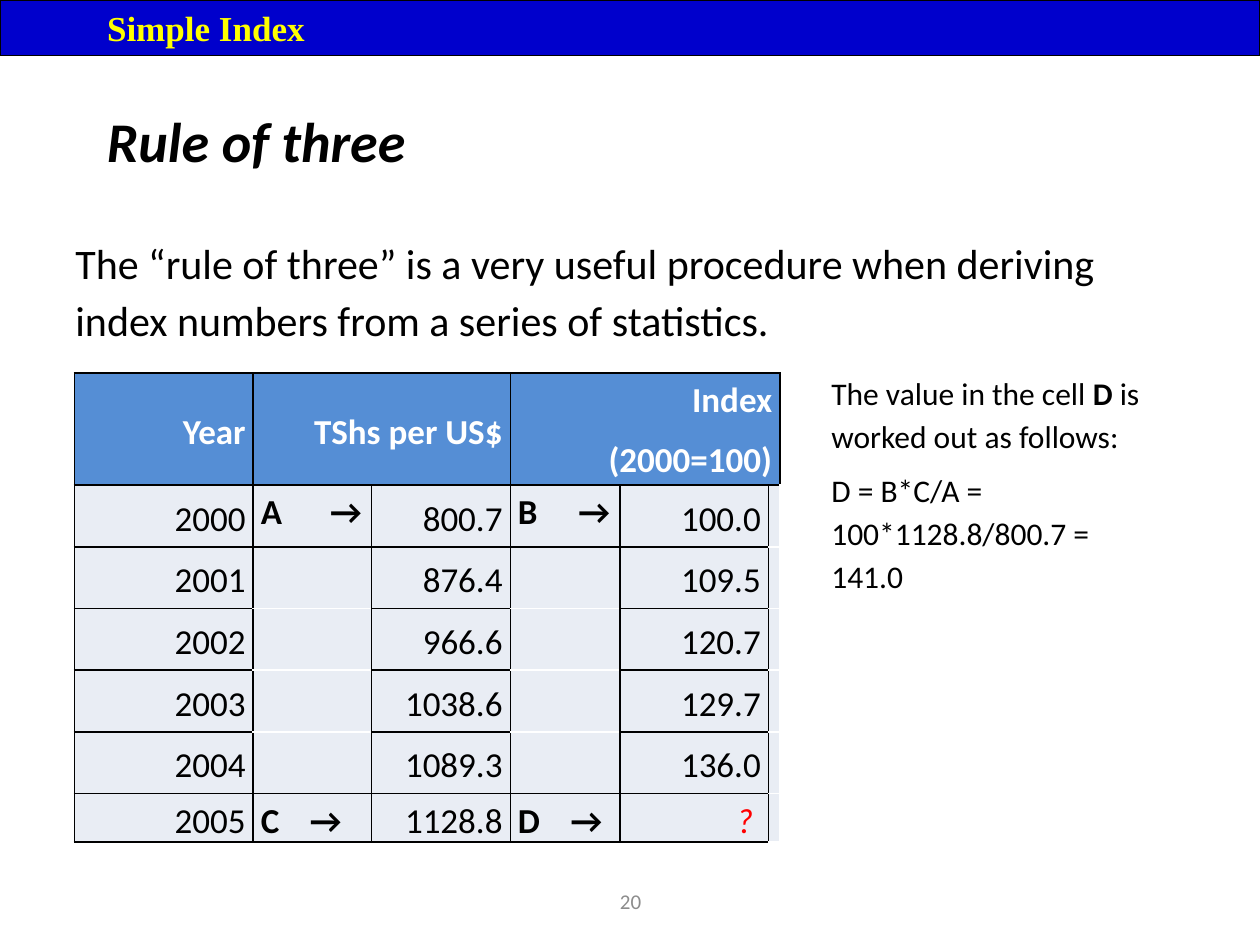
from lxml import etree
from pptx import Presentation
from pptx.dml.color import RGBColor
from pptx.enum.shapes import MSO_SHAPE
from pptx.enum.text import MSO_ANCHOR, PP_ALIGN
from pptx.oxml.ns import qn
from pptx.util import Inches, Pt

LEFT, CENTER, RIGHT = PP_ALIGN.LEFT, PP_ALIGN.CENTER, PP_ALIGN.RIGHT
TOP, MIDDLE = MSO_ANCHOR.TOP, MSO_ANCHOR.MIDDLE
RECTANGLE = MSO_SHAPE.RECTANGLE

BLACK, WHITE, RED = "000000", "FFFFFF", "FF0000"
HEADER_FILL, BODY_FILL = "558ED5", "E9EDF4"
COLUMN_WIDTHS = [1.42, 0.94, 1.1, 0.87, 1.18, 0.09]
ROW_HEIGHTS = [0.89] + [0.49] * 5 + [0.22]
LETTER_COLUMNS = (1, 3)
SPARE_COLUMN = 5
LAST_ROW = 6
HEADERS = {0: ["Year"], 1: ["TShs per US$"], 3: ["Index", "(2000=100)"]}
SERIES = [
    ("2000", "800.7", "100.0"),
    ("2001", "876.4", "109.5"),
    ("2002", "966.6", "120.7"),
    ("2003", "1038.6", "129.7"),
    ("2004", "1089.3", "136.0"),
    ("2005", "1128.8", "?\u00a0"),
]
LETTERS = {(1, 1): ("A", 0.55), (1, 3): ("B", 0.48), (6, 1): ("C", 0.39), (6, 3): ("D", 0.42)}


def color(value):
    return RGBColor.from_string(value)


def write_text(frame, paragraphs, size=20, font="Calibri", fill=BLACK, bold=False,
               italic=False, align=LEFT, line_spacing=None, space_before=0):
    for index, runs in enumerate(paragraphs):
        paragraph = frame.add_paragraph() if index else frame.paragraphs[0]
        paragraph.alignment = align
        paragraph.space_before = Pt(space_before)
        if line_spacing:
            paragraph.line_spacing = line_spacing
        for text, emphasis in [(runs, bold)] if isinstance(runs, str) else runs:
            run = paragraph.add_run()
            run.text = text
            run.font.name = font
            run.font.size = Pt(size)
            run.font.bold = emphasis
            run.font.italic = italic
            run.font.color.rgb = color(fill)


def add_text(slide, left, top, width, height, paragraphs, anchor=TOP, **text_format):
    box = slide.shapes.add_textbox(Inches(left), Inches(top), Inches(width), Inches(height))
    box.text_frame.word_wrap = True
    box.text_frame.vertical_anchor = anchor
    write_text(box.text_frame, paragraphs, **text_format)


def add_title_bar(slide, text):
    bar = slide.shapes.add_shape(RECTANGLE, 0, 0, Inches(10), Inches(0.44))
    bar.shadow.inherit = False
    bar.fill.solid()
    bar.fill.fore_color.rgb = color("0000CC")
    bar.line.color.rgb = color(BLACK)
    bar.line.width = Pt(0.75)
    frame = bar.text_frame
    frame.margin_left = Inches(0.85)
    frame.vertical_anchor = TOP
    write_text(frame, [text], font="Times New Roman", fill="FFFF00", bold=True)


def border_colors(row, column):
    borders = dict.fromkeys("LRTB", BLACK)
    if row and column == SPARE_COLUMN:
        borders.update(R=WHITE, B=WHITE, T=BLACK if row == 1 else WHITE)
    elif column in LETTER_COLUMNS:
        if 2 < row < LAST_ROW:
            borders["T"] = WHITE
        if 2 <= row < LAST_ROW - 1:
            borders["B"] = WHITE
    return borders


def style_cell(cell, fill, borders, anchor, margin):
    cell.vertical_anchor = anchor
    cell.margin_left = cell.margin_right = Inches(margin)
    cell.margin_top = cell.margin_bottom = 0
    properties = cell._tc.get_or_add_tcPr()
    for side, value in borders.items():
        line = etree.SubElement(properties, qn(f"a:ln{side}"), w=str(Pt(1)))
        solid = etree.SubElement(line, qn("a:solidFill"))
        etree.SubElement(solid, qn("a:srgbClr"), val=value)
    cell.fill.solid()
    cell.fill.fore_color.rgb = color(fill)


def add_tab_stop(paragraph, position):
    tabs = etree.SubElement(paragraph._p.get_or_add_pPr(), qn("a:tabLst"))
    etree.SubElement(tabs, qn("a:tab"), pos=str(Inches(position)), algn="l")


def write_cell(cell, paragraphs, **text_format):
    write_text(cell.text_frame, paragraphs, line_spacing=1.15, space_before=6, **text_format)


def add_index_table(slide):
    frame = slide.shapes.add_table(len(ROW_HEIGHTS), len(COLUMN_WIDTHS), Inches(0.59),
                                   Inches(2.96), Inches(sum(COLUMN_WIDTHS)),
                                   Inches(sum(ROW_HEIGHTS)))
    table = frame.table
    table.first_row = table.horz_banding = False
    for column, width in zip(table.columns, COLUMN_WIDTHS):
        column.width = Inches(width)
    for row, height in zip(table.rows, ROW_HEIGHTS):
        row.height = Inches(height)
    for row in range(len(ROW_HEIGHTS)):
        for column in range(len(COLUMN_WIDTHS)):
            top_aligned = column == 3 if row == 0 else column in LETTER_COLUMNS
            style_cell(table.cell(row, column), BODY_FILL if row else HEADER_FILL,
                       border_colors(row, column), TOP if top_aligned else MIDDLE,
                       0 if row and column == SPARE_COLUMN else 0.06)
    table.cell(0, 1).merge(table.cell(0, 2))
    table.cell(0, 3).merge(table.cell(0, 5))
    for column, paragraphs in HEADERS.items():
        write_cell(table.cell(0, column), paragraphs, fill=WHITE, bold=True, align=RIGHT)
    for row, values in enumerate(SERIES, 1):
        for column, value in zip((0, 2, 4), values):
            unknown = value.startswith("?")
            write_cell(table.cell(row, column), [value], align=RIGHT,
                       fill=RED if unknown else BLACK, italic=unknown)
    for (row, column), (letter, arrow_position) in LETTERS.items():
        cell = table.cell(row, column)
        write_cell(cell, [f"{letter}\t→"], bold=True)
        add_tab_stop(cell.text_frame.paragraphs[0], arrow_position)


def main():
    presentation = Presentation()
    presentation.slide_width = Inches(10)
    presentation.slide_height = Inches(7.5)
    slide = presentation.slides.add_slide(presentation.slide_layouts[6])
    add_text(slide, 3.42, 6.95, 3.17, 0.4, ["20"], anchor=MIDDLE, size=12,
             fill="8C8C8C", align=CENTER)
    add_text(slide, 0.75, 0.68, 8.75, 0.87, ["Rule of three"], anchor=MIDDLE, size=32,
             bold=True, italic=True)
    add_text(slide, 0.5, 1.78, 9, 1.06,
             ["The “rule of three” is a very useful procedure when deriving "
              "index numbers from a series of statistics."],
             size=24, line_spacing=1.14, space_before=4.8)
    add_index_table(slide)
    add_text(slide, 6.5, 2.88, 2.87, 1.89,
             [[("The value in the cell ", False), ("D", True),
               (" is worked out as follows:", False)],
              "D = B*C/A = 100*1128.8/800.7 = 141.0"],
             size=18, line_spacing=1.14, space_before=6)
    add_title_bar(slide, "Simple Index")
    presentation.save("out.pptx")


if __name__ == "__main__":
    main()
